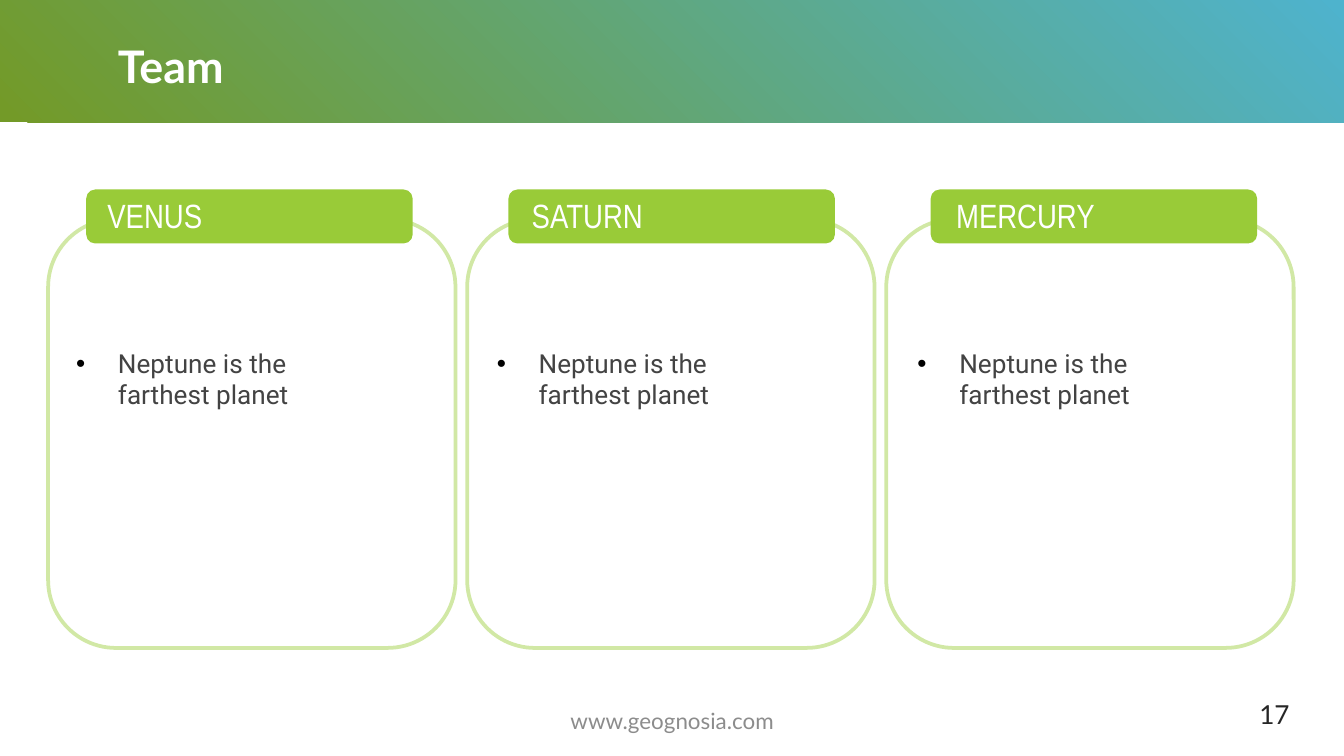
import copy
import dataclasses

import pptx
import pptx.dml.color
import pptx.enum.shapes
import pptx.enum.text
import pptx.oxml
import pptx.oxml.ns
import pptx.util
from pptx.util import Cm

COLOURS = {
    "band_start": "739A28",
    "band_end": "4EB3CF",
    "outline": "D1E8A5",
    "tab": "99CB38",
    "white": "FFFFFF",
    "body": "434343",
    "bullet": "000000",
    "footer": "8C8C8C",
    "number": "262626",
}
SHAPES = pptx.enum.shapes.MSO_SHAPE
ANCHOR = pptx.enum.text.MSO_ANCHOR
ALIGN = pptx.enum.text.PP_ALIGN


@dataclasses.dataclass(frozen=True)
class Frame:
    left: float
    top: float
    width: float
    height: float
    pitch: float = 0

    def column(self, index: int) -> "Frame":
        return dataclasses.replace(self, left=self.left + index * self.pitch)

    def lengths(self) -> tuple:
        return Cm(self.left), Cm(self.top), Cm(self.width), Cm(self.height)


@dataclasses.dataclass(frozen=True)
class Card:
    heading: str
    note: str


BAND = Frame(-0.1, -0.13, 25.6, 2.44)
TITLE = Frame(1.98, 0.56, 21.46, 1.35)
PANEL = Frame(0.91, 4.14, 7.7, 8.1, 7.92)
TAB = Frame(1.63, 3.58, 6.17, 1.02, 7.98)
HEADING = Frame(1.78, 3.56, 5.77, 1.02, 8.02)
NOTE = Frame(1.19, 6.43, 7.11, 1.45, 7.95)
FOOTER = Frame(8.41, 13.23, 8.59, 0.76)
NUMBER = Frame(23.55, 12.95, 1.52, 1.09)

CARDS = [
    Card("VENUS", "Neptune is the\nfarthest planet"),
    Card("SATURN", "Neptune is the\nfarthest planet"),
    Card("MERCURY", "Neptune is the\nfarthest planet"),
]


def colour(name: str) -> pptx.dml.color.RGBColor:
    return pptx.dml.color.RGBColor.from_string(COLOURS[name])


def add_bullet(para, indent: float) -> None:
    properties = para._p.get_or_add_pPr()
    properties.set("marL", str(Cm(indent)))
    properties.set("indent", str(-Cm(indent)))
    namespace = pptx.oxml.ns.nsdecls("a")
    for markup in (
        f'<a:buClr {namespace}><a:srgbClr val="{COLOURS["bullet"]}"/></a:buClr>',
        f'<a:buFont {namespace} typeface="Arial"/>',
        f'<a:buChar {namespace} char="•"/>',
    ):
        properties.append(pptx.oxml.parse_xml(markup))


def write_text(box, text: str, *, size: float, font: str, fill: str, bold: bool = False,
               align=ALIGN.LEFT, anchor=ANCHOR.TOP, inset: float = 0.13,
               bullet: bool = False) -> None:
    frame = box.text_frame
    frame.word_wrap = True
    frame.auto_size = pptx.enum.text.MSO_AUTO_SIZE.NONE
    frame.vertical_anchor = anchor
    frame.margin_left = frame.margin_right = Cm(0.25)
    frame.margin_top = frame.margin_bottom = Cm(inset)
    para = frame.paragraphs[0]
    para.text = text
    para.alignment = align
    if bullet:
        add_bullet(para, 0.79)
    for span in para.runs:
        span.font.size = pptx.util.Pt(size)
        span.font.name = font
        span.font.bold = bold
        span.font.color.rgb = colour(fill)
    for line_break in para._p.findall(pptx.oxml.ns.qn("a:br")):
        line_break.append(copy.deepcopy(para.runs[0]._r.rPr))


def add_text(page, frame: Frame, text: str, **style) -> None:
    write_text(page.shapes.add_textbox(*frame.lengths()), text, **style)


def add_block(page, kind, frame: Frame, *, fill: str = "", outline: str = ""):
    block = page.shapes.add_shape(kind, *frame.lengths())
    block.shadow.inherit = False
    if fill:
        block.fill.solid()
        block.fill.fore_color.rgb = colour(fill)
    else:
        block.fill.background()
    if outline:
        block.line.color.rgb = colour(outline)
        block.line.width = pptx.util.Pt(2)
    else:
        block.line.fill.background()
    return block


def add_header(page, text: str) -> None:
    band = add_block(page, SHAPES.RECTANGLE, BAND)
    band.fill.gradient()
    band.fill.gradient_angle = 45
    for stop, name, position in zip(band.fill.gradient_stops,
                                    ("band_start", "band_end"), (0.01, 1)):
        stop.color.rgb = colour(name)
        stop.position = position
    title = page.shapes.title
    title._element.addprevious(band._element)
    title.left, title.top, title.width, title.height = TITLE.lengths()
    write_text(title, text, size=24, font="Lato", fill="white", bold=True,
               anchor=ANCHOR.MIDDLE, inset=0.25)


def add_card(page, index: int, card: Card) -> None:
    add_block(page, SHAPES.ROUNDED_RECTANGLE, PANEL.column(index), outline="outline")
    add_text(page, NOTE.column(index), card.note, size=14, font="Roboto",
             fill="body", bullet=True)
    add_block(page, SHAPES.ROUNDED_RECTANGLE, TAB.column(index), fill="tab")
    add_text(page, HEADING.column(index), card.heading, size=18,
             font="Arial Narrow", fill="white")


def main() -> None:
    deck = pptx.Presentation()
    deck.slide_width, deck.slide_height = Cm(25.4), Cm(14.28)
    page = deck.slides.add_slide(deck.slide_layouts.get_by_name("Title Only"))
    add_header(page, "Team")
    for index, card in enumerate(CARDS):
        add_card(page, index, card)
    add_text(page, FOOTER, "www.geognosia.com", size=12, font="Lato", fill="footer",
             align=ALIGN.CENTER, anchor=ANCHOR.MIDDLE)
    add_text(page, NUMBER, "17", size=14, font="Lato", fill="number",
             anchor=ANCHOR.MIDDLE, inset=0.25)
    deck.save("out.pptx")


if __name__ == "__main__":
    main()
